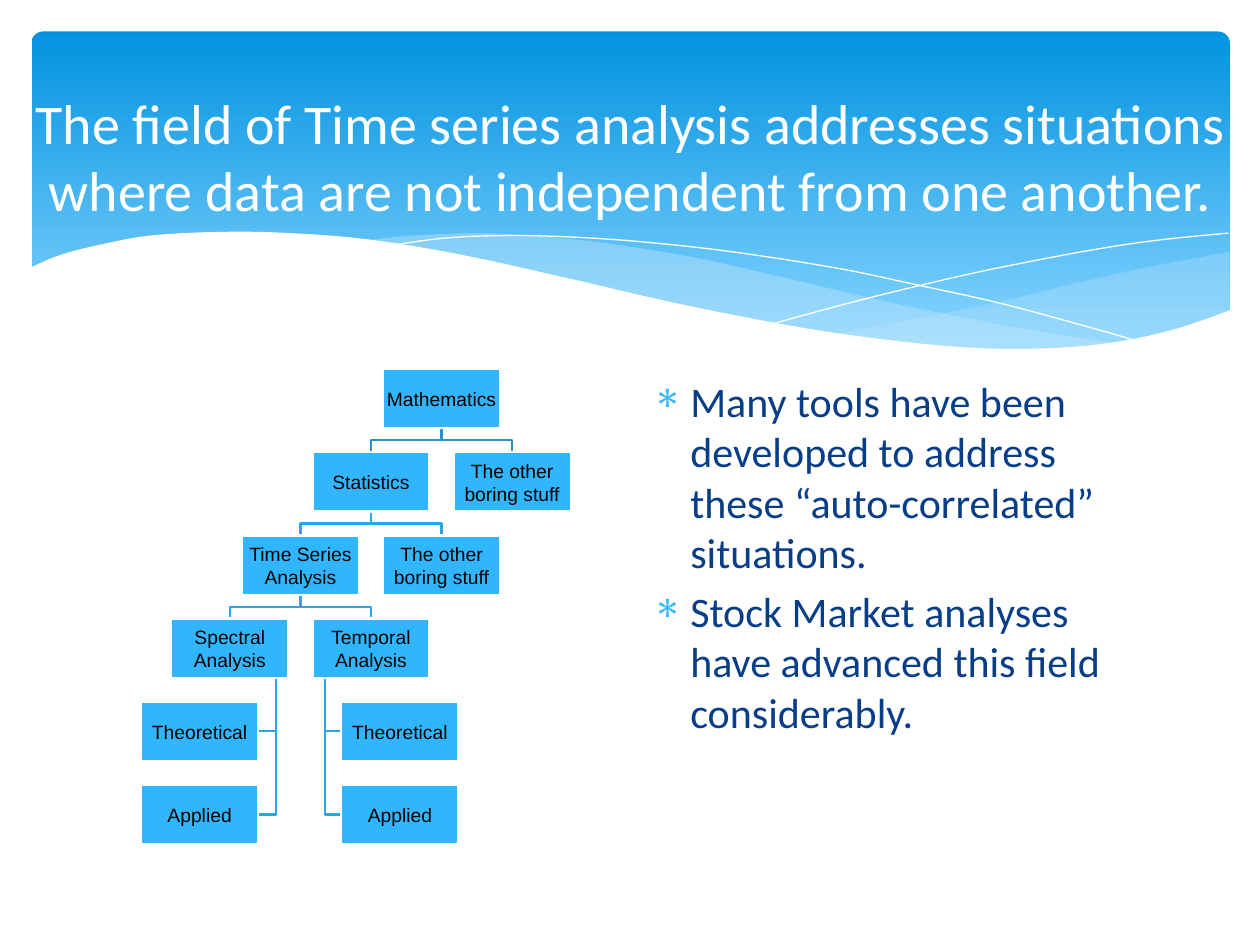
"""Build the slide that places time series analysis within mathematics."""
import pptx
import pptx.dml.color
import pptx.enum.shapes
import pptx.enum.text
import pptx.util
from pptx.util import Inches
from lxml import etree
from pptx.oxml.ns import qn

RGBColor = pptx.dml.color.RGBColor
WHITE = RGBColor(0xFF, 0xFF, 0xFF)
BLACK = RGBColor(0x00, 0x00, 0x00)
NAVY = RGBColor(0x07, 0x3E, 0x87)
SKY = RGBColor(0x31, 0xB6, 0xFD)
BANNER_TOP = RGBColor(0x02, 0x93, 0xE0)
BANNER_BOTTOM = RGBColor(0x83, 0xD3, 0xFE)
MIST = RGBColor(0xC6, 0xE7, 0xFC)
TOP_LINK = RGBColor(0x27, 0x92, 0xCB)
LINK = RGBColor(0x2C, 0xA5, 0xE6)

SHAPES = pptx.enum.shapes.MSO_SHAPE
MIDDLE = pptx.enum.text.MSO_ANCHOR.MIDDLE
TOP = pptx.enum.text.MSO_ANCHOR.TOP
CENTER = pptx.enum.text.PP_ALIGN.CENTER
LEFT = pptx.enum.text.PP_ALIGN.LEFT

TITLE_FONT = {"name": "Calibri", "size": pptx.util.Pt(32)}
BODY_FONT = {"name": "Calibri", "size": pptx.util.Pt(24)}
BOX_FONT = {"name": "Arial", "size": pptx.util.Pt(11)}
LINK_WIDTH = pptx.util.Pt(1.25)

BOX_W, BOX_H = 0.93, 0.47
TREE_LEFT, TREE_TOP = 1.36, 2.93
COLUMN_STEP, ROW_STEP = 0.56, 0.66
SPINE_INSET = 0.1

BRANCHES = [
    ("Mathematics", 3, 0),
    ("Statistics", 2, 1),
    ("The other boring stuff", 4, 1),
    ("Time Series Analysis", 1, 2),
    ("The other boring stuff", 3, 2),
    ("Spectral Analysis", 0, 3),
    ("Temporal Analysis", 2, 3),
]
LEAVES = [("Theoretical", 4), ("Applied", 5)]
LEFT_LEAF, RIGHT_LEAF = 1.12, 2.71

RIGHT_WAVE_TOP = [(9.76, 2), (9.21, 2.1), (8.61, 2.23), (8.05, 2.37), (7.53, 2.48),
                  (7.06, 2.57), (6.61, 2.65)]
RIGHT_WAVE_BOTTOM = [(6.61, 2.65), (7.05, 2.71), (7.57, 2.76), (8.14, 2.78), (8.63, 2.75),
                     (9.05, 2.69), (9.42, 2.59), (9.76, 2.47)]
LONG_WAVE_TOP = [(8.93, 2.73), (8.37, 2.65), (7.75, 2.54), (7.06, 2.4), (6.29, 2.22),
                 (5.69, 2.08), (5.14, 1.98), (4.65, 1.91), (4.2, 1.87), (3.8, 1.85),
                 (3.28, 1.87), (2.86, 1.91)]
LONG_WAVE_BOTTOM = [(2.86, 1.91), (3.42, 1.99), (4.04, 2.11), (4.49, 2.22), (5.3, 2.4),
                    (6.01, 2.55), (6.65, 2.66), (7.22, 2.74), (7.73, 2.77), (8.18, 2.78),
                    (8.57, 2.77), (8.93, 2.73)]
FALLING_LINE = [(3.09, 1.95), (3.53, 1.89), (4.01, 1.87), (4.5, 1.88), (5.1, 1.92),
                (5.82, 2), (6.65, 2.13), (7.27, 2.26), (7.95, 2.41), (8.69, 2.61),
                (9.07, 2.72)]
RISING_LINE = [(6.13, 2.57), (6.72, 2.41), (7.2, 2.29), (7.76, 2.16), (8.36, 2.04),
               (8.81, 1.96), (9.24, 1.9), (9.75, 1.85)]
FRONT_WAVE = [(9.77, 2.46), (9.3, 2.62), (8.75, 2.73), (8.09, 2.77), (7.44, 2.74),
              (6.68, 2.65), (6.03, 2.54), (5.29, 2.39), (4.47, 2.2), (3.65, 2.02),
              (2.92, 1.9), (2.3, 1.85), (1.77, 1.84), (1.19, 1.87), (0.76, 1.95),
              (0.46, 2.03), (0.23, 2.13)]


def curve(knots, steps=5):
    padded = [knots[0], *knots, knots[-1]]
    points = []
    for a, b, c, d in zip(padded, padded[1:], padded[2:], padded[3:]):
        for step in range(steps):
            t = step / steps
            points.append(tuple(
                (2 * q + (r - p) * t + (2 * p - 5 * q + 4 * r - s) * t ** 2
                 + (3 * q - p - 3 * r + s) * t ** 3) / 2
                for p, q, r, s in zip(a, b, c, d)))
    return points + [knots[-1]]


def add_outline(slide, points, close):
    corners = [(Inches(x), Inches(y)) for x, y in points]
    builder = slide.shapes.build_freeform(*corners[0])
    builder.add_line_segments(corners[1:], close=close)
    outline = builder.convert_to_shape()
    outline.shadow.inherit = False
    return outline


def add_area(slide, points, color, opacity=100):
    area = add_outline(slide, points, True)
    area.fill.solid()
    area.fill.fore_color.rgb = color
    area.line.fill.background()
    if opacity < 100:
        tint = area.fill._xPr.find(qn("a:solidFill"))[0]
        etree.SubElement(tint, qn("a:alpha")).set("val", str(opacity * 1000))


def add_path(slide, points, color, width):
    path = add_outline(slide, points, False)
    path.fill.background()
    path.line.color.rgb = color
    path.line.width = width


def write(frame, paragraphs, font, color, align, anchor):
    frame.word_wrap = True
    frame.vertical_anchor = anchor
    for index, wording in enumerate(paragraphs):
        paragraph = frame.add_paragraph() if index else frame.paragraphs[0]
        paragraph.alignment = align
        run = paragraph.add_run()
        run.text = wording
        for name, value in font.items():
            setattr(run.font, name, value)
        run.font.color.rgb = color


def add_text(slide, area, paragraphs, font, color, align, anchor):
    frame = slide.shapes.add_textbox(*map(Inches, area)).text_frame
    write(frame, paragraphs, font, color, align, anchor)
    return frame


def add_bullets(frame):
    for paragraph in frame.paragraphs:
        paragraph.space_before = pptx.util.Pt(4.8)
        properties = paragraph._p.get_or_add_pPr()
        properties.set("marL", str(Inches(0.3)))
        properties.set("indent", str(Inches(-0.3)))
        tint = etree.SubElement(properties, qn("a:buClr"))
        etree.SubElement(tint, qn("a:srgbClr")).set("val", str(SKY))
        etree.SubElement(properties, qn("a:buChar")).set("char", "∗")


def add_banner(slide):
    area = map(Inches, (0.25, 0.25, 9.51, 2.7))
    banner = slide.shapes.add_shape(SHAPES.ROUNDED_RECTANGLE, *area)
    banner.adjustments[0] = 0.034
    banner.shadow.inherit = False
    banner.line.fill.background()
    banner.fill.gradient()
    banner.fill.gradient_angle = 270
    stops = [(0, BANNER_TOP), (0.9, BANNER_BOTTOM)]
    for stop, (position, color) in zip(banner.fill.gradient_stops, stops):
        stop.position = position
        stop.color.rgb = color
    add_area(slide, curve(RIGHT_WAVE_TOP) + curve(RIGHT_WAVE_BOTTOM), MIST, 29)
    add_area(slide, curve(LONG_WAVE_TOP) + curve(LONG_WAVE_BOTTOM), MIST, 40)
    for knots in (FALLING_LINE, RISING_LINE):
        add_path(slide, curve(knots), WHITE, 0)
    add_area(slide, curve(FRONT_WAVE) + [(0.23, 3.29), (9.77, 3.29)], WHITE)


def column_left(column):
    return TREE_LEFT + column * COLUMN_STEP


def row_top(row):
    return TREE_TOP + row * ROW_STEP


def add_box(slide, wording, left, row):
    area = map(Inches, (left, row_top(row), BOX_W, BOX_H))
    box = slide.shapes.add_shape(SHAPES.RECTANGLE, *area)
    box.shadow.inherit = False
    box.fill.solid()
    box.fill.fore_color.rgb = SKY
    box.line.color.rgb = WHITE
    box.line.width = LINK_WIDTH
    for side in ("left", "top", "right", "bottom"):
        setattr(box.text_frame, f"margin_{side}", Inches(0.01))
    write(box.text_frame, [wording], BOX_FONT, BLACK, CENTER, MIDDLE)


def add_fork(slide, column, row, color):
    parent = column_left(column) + BOX_W / 2
    start, end = row_top(row) + BOX_H, row_top(row + 1)
    bend = (start + end) / 2
    for child in (parent - COLUMN_STEP, parent + COLUMN_STEP):
        add_path(slide, [(parent, start), (parent, bend), (child, bend), (child, end)],
                 color, LINK_WIDTH)


def add_spine(slide, spine, leaf_edge):
    for _, row in LEAVES:
        middle = row_top(row) + BOX_H / 2
        add_path(slide, [(spine, row_top(3) + BOX_H), (spine, middle), (leaf_edge, middle)],
                 LINK, LINK_WIDTH)


def add_tree(slide):
    for column, row, color in ((3, 0, TOP_LINK), (2, 1, LINK), (1, 2, LINK)):
        add_fork(slide, column, row, color)
    add_spine(slide, column_left(0) + BOX_W - SPINE_INSET, LEFT_LEAF + BOX_W)
    add_spine(slide, column_left(2) + SPINE_INSET, RIGHT_LEAF)
    for wording, column, row in BRANCHES:
        add_box(slide, wording, column_left(column), row)
    for left in (LEFT_LEAF, RIGHT_LEAF):
        for wording, row in LEAVES:
            add_box(slide, wording, left, row)


def main():
    deck = pptx.Presentation()
    deck.slide_width, deck.slide_height = Inches(10), Inches(7.5)
    slide = deck.slides.add_slide(deck.slide_layouts[6])
    add_banner(slide)
    add_text(slide, (0.17, 0.55, 9.67, 1.37),
             ["The field of Time series analysis addresses situations where data are "
              "not independent from one another."], TITLE_FONT, WHITE, CENTER, MIDDLE)
    add_tree(slide)
    points = add_text(slide, (5.08, 2.93, 4.18, 3.77),
                      ["Many tools have been developed to address these "
                       "“auto-correlated” situations.",
                       "Stock Market analyses have advanced this field considerably."],
                      BODY_FONT, NAVY, LEFT, TOP)
    add_bullets(points)
    deck.save("out.pptx")


if __name__ == "__main__":
    main()
